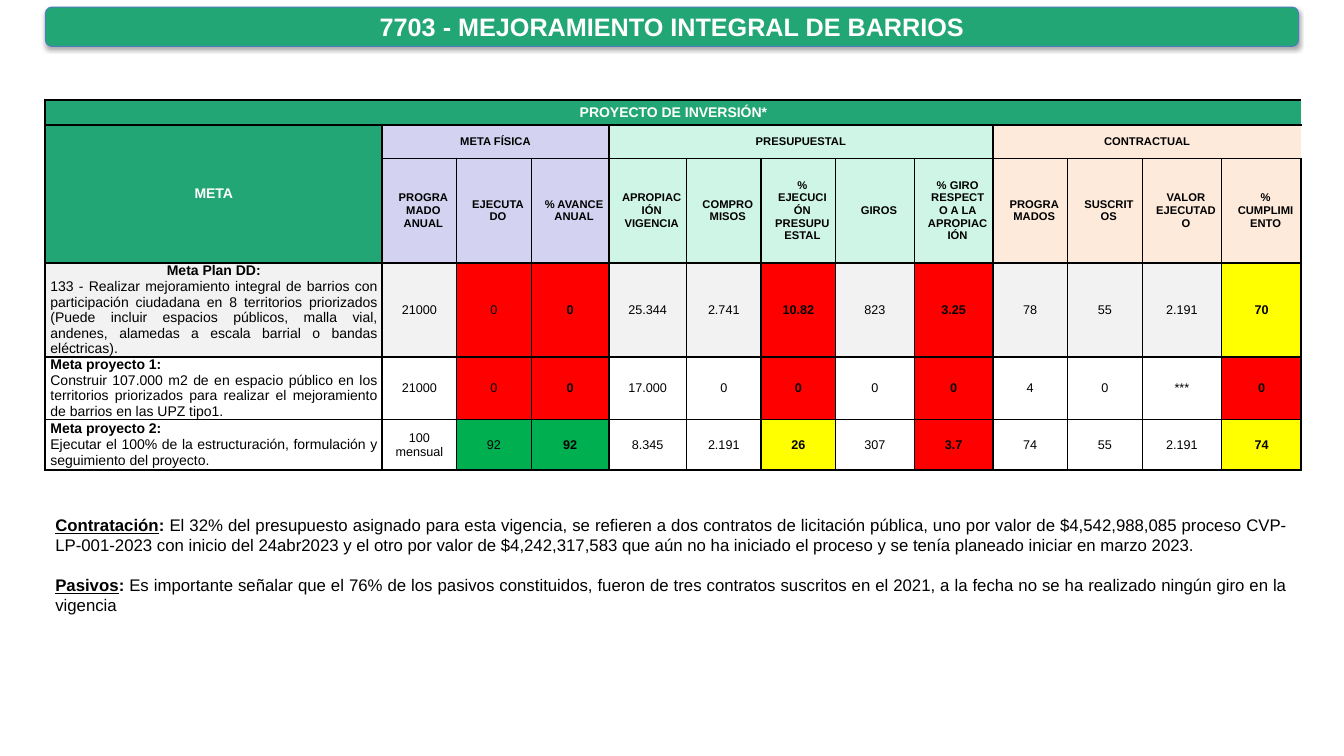
import pptx
import pptx.util
import pptx.dml.color
import pptx.enum.shapes
import pptx.enum.text
import pptx.oxml
import pptx.oxml.ns

Inches = pptx.util.Inches
Pt = pptx.util.Pt
RGBColor = pptx.dml.color.RGBColor
ALIGN = pptx.enum.text.PP_ALIGN
MIDDLE = pptx.enum.text.MSO_ANCHOR.MIDDLE

FONT = "Arial"
BLACK = RGBColor(0x00, 0x00, 0x00)
WHITE = RGBColor(0xFF, 0xFF, 0xFF)
BRAND_GREEN = RGBColor(0x22, 0xA6, 0x76)
BANNER_EDGE = RGBColor(0x4B, 0x7E, 0xBC)
LILAC = RGBColor(0xD3, 0xD3, 0xF1)
MINT = RGBColor(0xCF, 0xF5, 0xE7)
PEACH = RGBColor(0xFD, 0xEA, 0xDA)
GREY = RGBColor(0xF2, 0xF2, 0xF2)
RED = RGBColor(0xFF, 0x00, 0x00)
YELLOW = RGBColor(0xFF, 0xFF, 0x00)
GREEN = RGBColor(0x00, 0xB0, 0x50)

LEFT, WIDTH = 0.45, 12.43
COLUMN_WIDTHS = [3.34, 0.74, 0.74, 0.77, 0.77, 0.74, 0.74, 0.78, 0.78, 0.74, 0.74, 0.79, 0.79]
ROW_HEIGHTS = [0.25, 0.33, 1.04, 0.92, 0.62, 0.5]
GROUP_STARTS = {0, 1, 4, 9, 13}
PERCENT_COLUMNS = {3, 6, 8, 12}

GROUPS = [
    ("META FÍSICA", LILAC, 1, ["PROGRAMADO\nANUAL", "EJECUTADO", "% AVANCE\nANUAL"]),
    ("PRESUPUESTAL", MINT, 4, ["APROPIACIÓN VIGENCIA", "COMPROMISOS", "% EJECUCIÓN PRESUPUESTAL",
                               "GIROS", "% GIRO RESPECTO A LA APROPIACIÓN"]),
    ("CONTRACTUAL", PEACH, 9, ["PROGRAMADOS", "SUSCRITOS", "VALOR EJECUTADO", "% CUMPLIMIENTO"]),
]

GOALS = [
    ("Meta Plan DD:", ALIGN.CENTER, GREY,
     "133 - Realizar mejoramiento integral de barrios con participación ciudadana en 8 territorios "
     "priorizados (Puede incluir espacios públicos, malla vial, andenes, alamedas a escala barrial "
     "o bandas eléctricas).",
     ["21000", "0", "0", "25.344", "2.741", "10.82", "823", "3.25", "78", "55", "2.191", "70"],
     {2: RED, 3: RED, 6: RED, 8: RED, 12: YELLOW}),
    ("Meta proyecto 1:", ALIGN.JUSTIFY, None,
     "Construir 107.000 m2 de en espacio público en los territorios priorizados para realizar el "
     "mejoramiento de barrios en las UPZ tipo1.",
     ["21000", "0", "0", "17.000", "0", "0", "0", "0", "4", "0", "***", "0"],
     {2: RED, 3: RED, 6: RED, 8: RED, 12: RED}),
    ("Meta proyecto 2:", ALIGN.JUSTIFY, None,
     "Ejecutar el 100% de la estructuración, formulación y seguimiento del proyecto.",
     ["100\nmensual", "92", "92", "8.345", "2.191", "26", "307", "3.7", "74", "55", "2.191", "74"],
     {2: GREEN, 3: GREEN, 6: YELLOW, 8: RED, 12: YELLOW}),
]

NOTES = [
    ("Contratación", ": ",
     "El 32% del presupuesto asignado para esta vigencia, se refieren a dos contratos de licitación "
     "pública, uno por valor de $4,542,988,085 proceso CVP-LP-001-2023 con inicio del 24abr2023 y el "
     "otro por valor de $4,242,317,583 que aún no ha iniciado el proceso y se tenía planeado iniciar "
     "en marzo 2023."),
    ("Pasivos", ":",
     " Es importante señalar que el 76% de los pasivos constituidos, fueron de tres contratos "
     "suscritos en el 2021, a la fecha no se ha realizado ningún giro en la vigencia"),
]


def add_run(paragraph, text, size, bold=False, color=BLACK, underline=False):
    run = paragraph.add_run()
    run.text = text
    font = run.font
    font.name, font.size, font.bold, font.underline = FONT, Pt(size), bold, underline
    font.color.rgb = color


def add_paragraph(frame, index, align):
    paragraph = frame.add_paragraph() if index else frame.paragraphs[0]
    paragraph.alignment = align
    return paragraph


def add_banner(slide, title):
    banner = slide.shapes.add_shape(pptx.enum.shapes.MSO_SHAPE.ROUNDED_RECTANGLE,
                                    Inches(LEFT), Inches(0.07), Inches(WIDTH), Inches(0.39))
    banner.fill.solid()
    banner.fill.fore_color.rgb = BRAND_GREEN
    banner.line.color.rgb = BANNER_EDGE
    banner.line.width = Pt(0.75)
    banner._element.spPr.append(pptx.oxml.parse_xml(
        f'<a:effectLst {pptx.oxml.ns.nsdecls("a")}>'
        f'<a:outerShdw blurRad="{Pt(3.1)}" dist="{Pt(1.8)}" dir="5400000" rotWithShape="0">'
        '<a:srgbClr val="000000"><a:alpha val="35000"/></a:srgbClr>'
        '</a:outerShdw></a:effectLst>'))
    frame = banner.text_frame
    frame.vertical_anchor = MIDDLE
    add_run(add_paragraph(frame, 0, ALIGN.CENTER), title, 18, True, WHITE)


def fill_cell(cell, fill, lines, size, indent=0):
    cell.vertical_anchor = MIDDLE
    cell.margin_left = cell.margin_right = Inches(0.05)
    cell.margin_top = cell.margin_bottom = 0
    if fill is None:
        cell.fill.background()
    else:
        cell.fill.solid()
        cell.fill.fore_color.rgb = fill
    for index, (text, align, bold, color) in enumerate(lines):
        paragraph = add_paragraph(cell.text_frame, index, align)
        if indent:
            paragraph._p.get_or_add_pPr().set("marL", str(Inches(indent)))
        add_run(paragraph, text, size, bold, color)


def centered(text, bold, color=BLACK):
    return [(line, ALIGN.CENTER, bold, color) for line in text.split("\n")]


def set_borders(cell, widths):
    properties = cell._tc.get_or_add_tcPr()
    for position, (side, width) in enumerate(widths.items()):
        properties.insert(position, pptx.oxml.parse_xml(
            f'<a:ln{side} {pptx.oxml.ns.nsdecls("a")} w="{Pt(width)}">'
            f'<a:solidFill><a:srgbClr val="{BLACK}"/></a:solidFill></a:ln{side}>'))


def outline_cells(table):
    def column_edge(column):
        return 1.5 if column in GROUP_STARTS else 1

    def row_edge(row):
        return 1.5 if row in (0, len(ROW_HEIGHTS)) else 1

    for row in range(len(ROW_HEIGHTS)):
        for column in range(len(COLUMN_WIDTHS)):
            origin = table.cell(row, column)
            if origin.is_spanned:
                continue
            bottom, right = row + origin.span_height, column + origin.span_width
            for r in range(row, bottom):
                for c in range(column, right):
                    edges = {"L": (c == column, column_edge(c)),
                             "R": (c + 1 == right, column_edge(right)),
                             "T": (r == row, row_edge(r)),
                             "B": (r + 1 == bottom, row_edge(bottom))}
                    set_borders(table.cell(r, c),
                                {side: width for side, (outer, width) in edges.items() if outer})


def add_investment_table(slide):
    table = slide.shapes.add_table(len(ROW_HEIGHTS), len(COLUMN_WIDTHS), Inches(LEFT), Inches(0.99),
                                   Inches(WIDTH), Inches(sum(ROW_HEIGHTS))).table
    table.first_row = table.horz_banding = False
    for column, width in zip(table.columns, COLUMN_WIDTHS):
        column.width = Inches(width)
    for row, height in zip(table.rows, ROW_HEIGHTS):
        row.height = Inches(height)

    table.cell(0, 0).merge(table.cell(0, 12))
    fill_cell(table.cell(0, 0), BRAND_GREEN, centered("PROYECTO DE INVERSIÓN*", True, WHITE), 10)
    table.cell(1, 0).merge(table.cell(2, 0))
    fill_cell(table.cell(1, 0), BRAND_GREEN, centered("META", True, WHITE), 10)

    for group, fill, start, headings in GROUPS:
        table.cell(1, start).merge(table.cell(1, start + len(headings) - 1))
        fill_cell(table.cell(1, start), fill, centered(group, True), 8)
        for column, heading in enumerate(headings, start):
            fill_cell(table.cell(2, column), fill, centered(heading, True), 8, 0.08)

    for row, (goal, align, fill, description, values, status) in enumerate(GOALS, 3):
        fill_cell(table.cell(row, 0), fill,
                  [(goal, align, True, BLACK), (description, ALIGN.JUSTIFY, False, BLACK)], 10)
        for column, value in enumerate(values, 1):
            fill_cell(table.cell(row, column), status.get(column, fill),
                      centered(value, column in PERCENT_COLUMNS), 9)
    outline_cells(table)


def add_notes_text(slide):
    frame = slide.shapes.add_textbox(Inches(LEFT), Inches(5.06), Inches(WIDTH), Inches(1.11)).text_frame
    frame.word_wrap = True
    for index, (topic, colon, remark) in enumerate(NOTES):
        paragraph = add_paragraph(frame, index, ALIGN.JUSTIFY)
        if index:
            paragraph.space_before = Pt(14)
        add_run(paragraph, topic, 12, True, underline=True)
        add_run(paragraph, colon, 12, True)
        add_run(paragraph, remark, 12)


def main():
    presentation = pptx.Presentation()
    presentation.slide_width, presentation.slide_height = Inches(13.33), Inches(7.5)
    slide = presentation.slides.add_slide(presentation.slide_layouts[6])
    add_banner(slide, "7703 - MEJORAMIENTO INTEGRAL DE BARRIOS")
    add_investment_table(slide)
    add_notes_text(slide)
    presentation.save("out.pptx")


if __name__ == "__main__":
    main()
